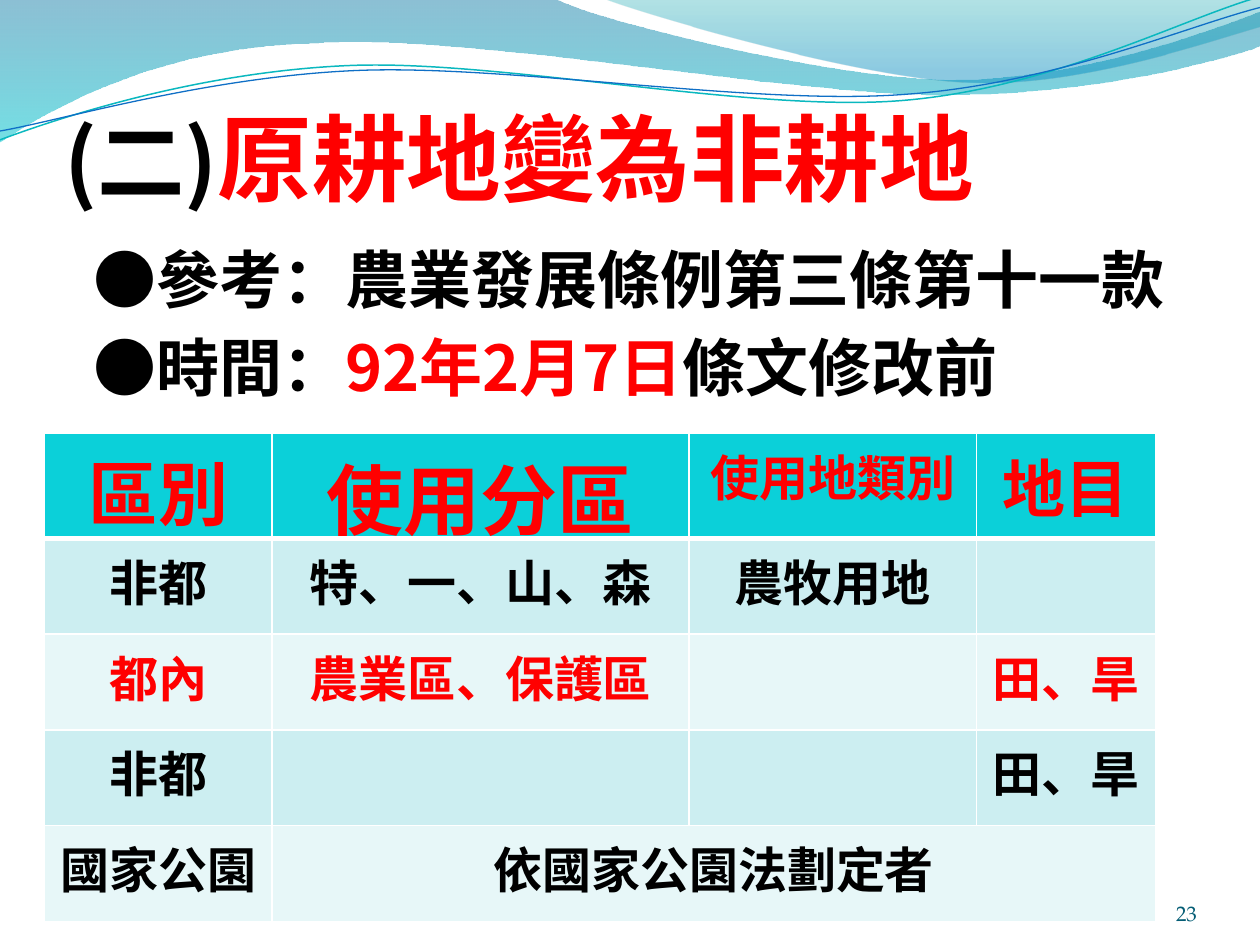
from dataclasses import dataclass
from itertools import chain
from math import cos, radians, sin

from lxml import etree
from pptx import Presentation
from pptx import util as u
from pptx.dml.color import RGBColor
from pptx.enum import text
from pptx.oxml.ns import qn


@dataclass(frozen=True)
class Theme:
    """Hold the colours, fonts and type sizes."""
    cjk: str = "Noto Sans CJK SC"
    serif: str = "TeX Gyre Pagella"
    black: str = "000000"
    red: str = "FF0000"
    white: str = "FFFFFF"
    header: str = "0BD0D9"
    bands: tuple = ("CCEEF1", "E7F7F8")
    number: str = "045D75"
    teal: str = "0AB8BF"
    blue: str = "0F6FC6"
    wide_wave: tuple = (("0074A1", 0, 45), ("00C6CF", 100, 55))
    right_wave: tuple = (("00A1A9", 0, 30), ("008BBF", 80, 45))
    title_mark: int = 50
    title: int = 54
    body: int = 36
    headings: tuple = (40, 44, 28, 36)
    cell: int = 28
    small: int = 12


T = Theme()

WIDE_WAVE = [
    [(0, 0)], [(4.4, -0.01)],
    [(4.76, 0.17), (6.64, 0.63), (7.58, 0.63)],
    [(8.53, 0.63), (9.58, 0.26), (10, 0.09)],
    [(10.01, 0.36)],
    [(9.83, 0.44), (8.7, 0.76), (7.46, 0.75)],
    [(6.22, 0.75), (3.82, 0.28), (2.57, 0.34)],
    [(1.29, 0.36), (0.46, 0.83), (-0.01, 1.13)],
]
RIGHT_WAVE = [
    [(4.79, -0.01)],
    [(5.09, 0.11), (6.82, 0.62), (7.69, 0.65)],
    [(8.56, 0.69), (9.61, 0.32), (10, 0.21)],
    [(10, 0)],
]
TEAL_LINE = [
    [(0, 1.11)],
    [(0.48, 0.93), (1.58, 0.57), (2.77, 0.52)],
    [(3.95, 0.47), (5.93, 0.89), (7.13, 0.8)],
    [(8.33, 0.71), (9.38, 0.15), (9.98, -0.02)],
]
BLUE_LINE = [
    [(0, 1.04)],
    [(0.47, 0.96), (1.64, 0.61), (2.83, 0.56)],
    [(4.03, 0.51), (5.97, 0.84), (7.17, 0.75)],
    [(8.36, 0.67), (9.41, 0.21), (10, 0.06)],
]
ROWS = [
    ["區別", "使用分區", "使用地類別", "地目"],
    ["非都", "特、一、山、森", "農牧用地", ""],
    ["都內", "農業區、保護區", "", "田、旱"],
    ["非都", "", "", "田、旱"],
    ["國家公園", "依國家公園法劃定者", "", ""],
]


def add_curve(s, segments, close):
    """Draw an outline whose three-point segments are Bézier curves."""
    pts = [(u.Inches(x), u.Inches(y)) for x, y in chain.from_iterable(segments)]
    fb = s.shapes.build_freeform(*pts[0])
    fb.add_line_segments(pts[1:], close=close)
    sp = fb.convert_to_shape()
    sp.shadow.inherit = False
    lines = iter(list(sp._element.iter(qn("a:lnTo"))))
    for segment in segments[1:]:
        parts = [next(lines) for _ in segment]
        if len(parts) == 3:
            curve = etree.Element(qn("a:cubicBezTo"))
            parts[0].addprevious(curve)
            for part in parts:
                curve.append(part[0])
                part.getparent().remove(part)
    return sp


def add_wave(s, segments, stops):
    """Add a closed wave with a translucent top-down gradient."""
    sp = add_curve(s, segments, True)
    sp.line.fill.background()
    sp.fill.gradient()
    sp.fill.gradient_angle = 270
    marks = sp._element.iter(qn("a:gs"))
    for stop, gs, (colour, position, alpha) in zip(sp.fill.gradient_stops, marks, stops):
        stop.color.rgb = RGBColor.from_string(colour)
        stop.position = position / 100
        etree.SubElement(gs[0], qn("a:alpha"), val=str(alpha * 1000))


def add_swoosh(s, segments, centre, colour, width, tilt=2.7):
    """Add a thin curve, laid out level and then tilted about its centre."""
    cx, cy = centre
    c, d = cos(radians(tilt)), sin(radians(tilt))
    level = [[(cx + (x - cx) * c - (y - cy) * d, cy + (x - cx) * d + (y - cy) * c)
              for x, y in segment] for segment in segments]
    sp = add_curve(s, level, False)
    sp.fill.background()
    sp.line.color.rgb = RGBColor.from_string(colour)
    sp.line.width = u.Pt(width)
    sp.rotation = 360 - tilt


def add_run(p, words, size, colour, font=T.cjk, bold=True):
    """Append one styled run to a paragraph."""
    r = p.add_run()
    r.text = words
    r.font.size = u.Pt(size)
    r.font.bold = bold
    r.font.color.rgb = RGBColor.from_string(colour)
    r.font.name = font
    r.font._element.find(qn("a:latin")).addnext(
        etree.Element(qn("a:ea"), typeface=font))


def add_text(s, box, anchor, insets):
    """Add a wrapping text box and return its text frame."""
    tf = s.shapes.add_textbox(*map(u.Inches, box)).text_frame
    tf.word_wrap = True
    tf.vertical_anchor = anchor
    (tf.margin_left, tf.margin_top,
     tf.margin_right, tf.margin_bottom) = map(u.Inches, insets)
    return tf


def add_bullets(s, lines):
    """Add the body lines, each a list of (words, colour) runs."""
    tf = add_text(s, (0.59, 1.86, 8.91, 1.5), text.MSO_ANCHOR.TOP, (0.1, 0.05, 0.1, 0.05))
    for i, line in enumerate(lines):
        p = tf.add_paragraph() if i else tf.paragraphs[0]
        p.space_before = u.Pt(0.2 * T.body)
        p._p.get_or_add_pPr().set("marL", str(u.Inches(0.05)))
        for words, colour in line:
            add_run(p, words, T.body, colour)


def style_cell(cell, fill, bottom):
    """Give a cell its white borders and solid fill."""
    tcPr = cell._tc.get_or_add_tcPr()
    for side, width in zip("LRTB", (1, 1, 1, bottom)):
        ln = etree.SubElement(tcPr, qn("a:ln" + side), w=str(u.Pt(width)))
        solid = etree.SubElement(ln, qn("a:solidFill"))
        etree.SubElement(solid, qn("a:srgbClr"), val=T.white)
    cell.fill.solid()
    cell.fill.fore_color.rgb = RGBColor.from_string(fill)


def add_zones(s, rows, widths, height):
    """Add the table of land zones."""
    frame = s.shapes.add_table(
        len(rows), len(widths), u.Inches(0.35), u.Inches(3.44),
        u.Inches(sum(widths)), u.Inches(height * len(rows)))
    table = frame.table
    for column, width in zip(table.columns, widths):
        column.width = u.Inches(width)
    for i, row in enumerate(rows):
        table.rows[i].height = u.Inches(height)
        fill = T.bands[(i - 1) % 2] if i else T.header
        colour = T.red if i in (0, 2) else T.black
        for j, words in enumerate(row):
            cell = table.cell(i, j)
            style_cell(cell, fill, 1 if i else 3)
            if words:
                p = cell.text_frame.paragraphs[0]
                p.alignment = text.PP_ALIGN.CENTER
                add_run(p, words, T.cell if i else T.headings[j], colour)
    table.cell(4, 1).merge(table.cell(4, 3))


def main():
    """Build the slide and save it."""
    prs = Presentation()
    prs.slide_width, prs.slide_height = u.Inches(10), u.Inches(7.5)
    s = prs.slides.add_slide(prs.slide_layouts[6])
    add_wave(s, WIDE_WAVE, T.wide_wave)
    add_wave(s, RIGHT_WAVE, T.right_wave)
    add_swoosh(s, TEAL_LINE, (4.99, 0.58), T.teal, 0.85)
    add_swoosh(s, BLUE_LINE, (5, 0.59), T.blue, 0.75)
    p = add_text(s, (0.51, 0.44, 9, 1.25), text.MSO_ANCHOR.BOTTOM, (0, 0.05, 0, 0)).paragraphs[0]
    add_run(p, "(二)", T.title_mark, T.black)
    add_run(p, "原耕地變為非耕地", T.title, T.red)
    add_bullets(s, [
        [("●參考：農業發展條例第三條第十一款", T.black)],
        [("●時間：", T.black), ("92年2月7日", T.red), ("條文修改前", T.black)],
    ])
    add_zones(s, ROWS, (1.81, 3.31, 2.28, 1.42), 0.76)
    p = add_text(s, (8.67, 6.95, 0.83, 0.4), text.MSO_ANCHOR.BOTTOM, (0, 0, 0, 0)).paragraphs[0]
    p.alignment = text.PP_ALIGN.RIGHT
    add_run(p, "23", T.small, T.number, T.serif, False)
    prs.save("out.pptx")


if __name__ == "__main__":
    main()
